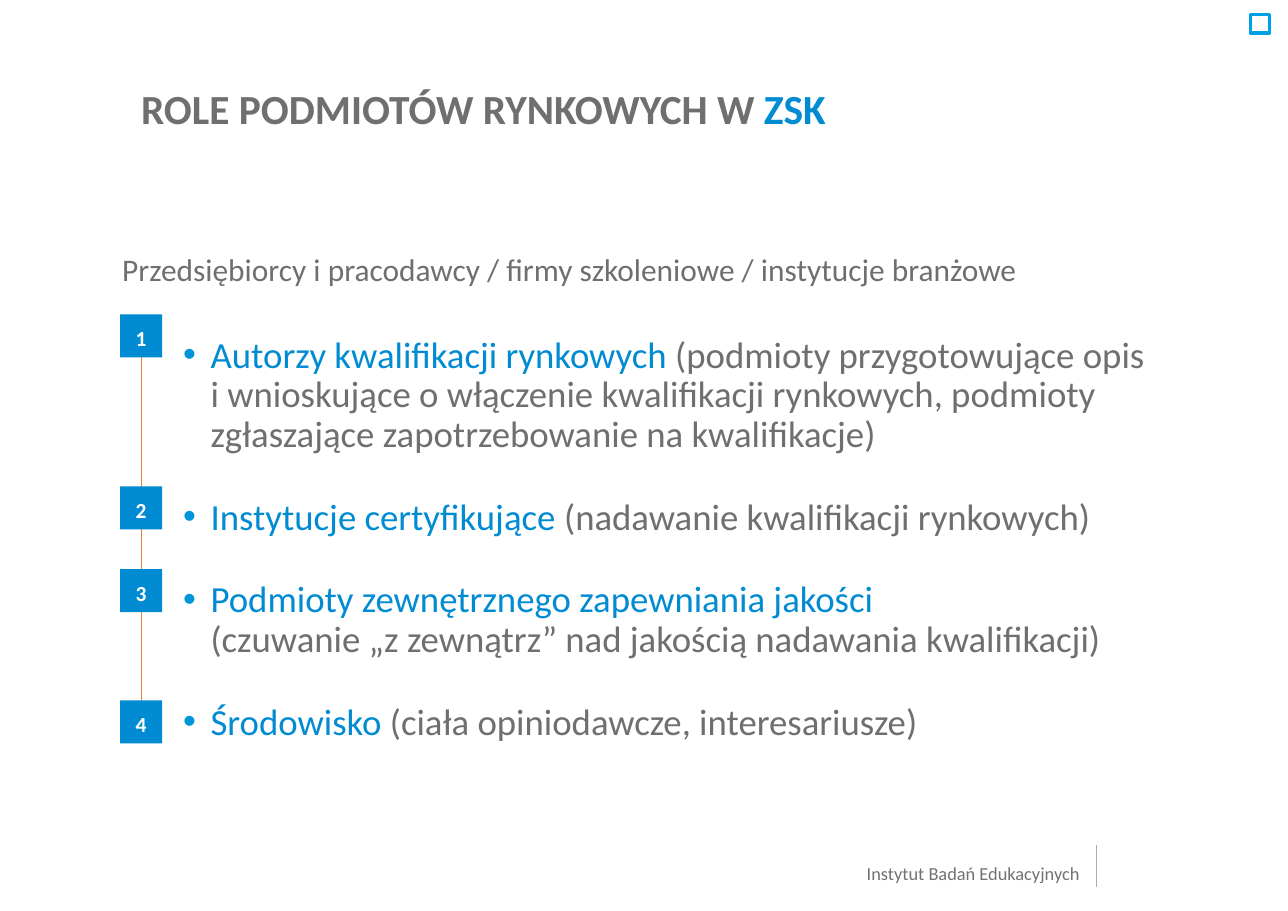
from dataclasses import dataclass

import lxml.etree
import pptx
import pptx.dml.color
import pptx.enum.shapes
import pptx.enum.text
import pptx.oxml.ns
import pptx.util

Inches, Pt = pptx.util.Inches, pptx.util.Pt
qn = pptx.oxml.ns.qn
ALIGN = pptx.enum.text.PP_ALIGN
ANCHOR = pptx.enum.text.MSO_ANCHOR
RECT = pptx.enum.shapes.MSO_SHAPE.RECTANGLE
BLUE, GREY, WHITE = "008BD2", "706E6F", "FFFFFF"
BADGE_LEFT, BADGE_W, BADGE_H = 1.09, 0.38, 0.39


@dataclass
class Role:
    badge_top: float
    name: str
    details: str  # a line feed is a line break inside the paragraph


ROLES = [
    Role(2.85, "Autorzy kwalifikacji rynkowych ",
         "(podmioty przygotowujące opis \ni wnioskujące o włączenie kwalifikacji rynkowych, "
         "podmioty zgłaszające zapotrzebowanie na kwalifikacje)"),
    Role(4.41, "Instytucje certyfikujące ", "(nadawanie kwalifikacji rynkowych)"),
    Role(5.16, "Podmioty zewnętrznego zapewniania jakości ",
         "\n(czuwanie „z zewnątrz” nad jakością nadawania kwalifikacji)"),
    Role(6.35, "Środowisko ", "(ciała opiniodawcze, interesariusze)"),
]


def rgb(hex_color: str) -> pptx.dml.color.RGBColor:
    return pptx.dml.color.RGBColor.from_string(hex_color)


def place(sp, left: float, top: float, width: float, height: float) -> None:
    sp.left, sp.top = Inches(left), Inches(top)
    sp.width, sp.height = Inches(width), Inches(height)


def setup_frame(tf, inset: bool = False, **attrs) -> None:
    """Apply frame attributes, without margins unless inset is set."""
    values = {"word_wrap": True, "auto_size": pptx.enum.text.MSO_AUTO_SIZE.NONE,
              "vertical_anchor": ANCHOR.TOP}
    if not inset:
        values |= dict.fromkeys(
            ("margin_left", "margin_top", "margin_right", "margin_bottom"), 0)
    for name, value in (values | attrs).items():
        setattr(tf, name, value)


def add_text(p, text: str, size: float, color: str, bold: bool = False) -> None:
    for i, line in enumerate(text.split("\n")):
        if i:
            p.add_line_break()
        if line:
            r = p.add_run()
            r.text = line
            for name, value in {"name": "Calibri", "size": Pt(size), "bold": bold}.items():
                setattr(r.font, name, value)
            r.font.color.rgb = rgb(color)


def add_bullet(p, color: str) -> None:
    pPr = p._p.get_or_add_pPr()
    pPr.set("marL", str(Inches(0.25)))
    pPr.set("indent", str(Inches(-0.25)))
    clr = lxml.etree.SubElement(pPr, qn("a:buClr"))
    lxml.etree.SubElement(clr, qn("a:srgbClr"), val=color)
    lxml.etree.SubElement(pPr, qn("a:buFont"), typeface="Arial")
    lxml.etree.SubElement(pPr, qn("a:buChar"), char="•")


def add_line(s, x: float, top: float, bottom: float, color: str) -> None:
    line = s.shapes.add_connector(pptx.enum.shapes.MSO_CONNECTOR.STRAIGHT,
                                  Inches(x), Inches(top), Inches(x), Inches(bottom))
    line.line.color.rgb = rgb(color)
    line.line.width = Pt(0.5)
    lxml.etree.SubElement(line._element.spPr, qn("a:effectLst"))


def add_rect(s, left: float, top: float, width: float, height: float, fill: str):
    sp = s.shapes.add_shape(RECT, Inches(left), Inches(top), Inches(width), Inches(height))
    sp.shadow.inherit = False
    sp.fill.solid()
    sp.fill.fore_color.rgb = rgb(fill)
    sp.line.fill.background()
    return sp


def add_label(s, left: float, top: float, width: float, height: float,
              text: str, size: float, color: str, inset: bool = False) -> None:
    sp = s.shapes.add_textbox(Inches(left), Inches(top), Inches(width), Inches(height))
    setup_frame(sp.text_frame, inset)
    add_text(sp.text_frame.paragraphs[0], text, size, color)


def add_badge(s, number: int, top: float) -> None:
    sp = add_rect(s, BADGE_LEFT, top, BADGE_W, BADGE_H, BLUE)
    setup_frame(sp.text_frame, vertical_anchor=ANCHOR.MIDDLE)
    p = sp.text_frame.paragraphs[0]
    p.alignment, p.line_spacing = ALIGN.CENTER, 1.15
    add_text(p, str(number), 14, WHITE, bold=True)


def fill_title(sp) -> None:
    place(sp, 1.28, 0.8, 10.2, 0.73)
    setup_frame(sp.text_frame)
    p = sp.text_frame.paragraphs[0]
    p.alignment, p.line_spacing = ALIGN.LEFT, 0.9
    add_text(p, "ROLE PODMIOTÓW RYNKOWYCH W ", 27, GREY, bold=True)
    add_text(p, "ZSK", 27, BLUE, bold=True)


def fill_roles(sp) -> None:
    place(sp, 1.66, 3.05, 8.9, 3.8)
    tf = sp.text_frame
    setup_frame(tf)
    for i, role in enumerate(ROLES):
        p = tf.add_paragraph() if i else tf.paragraphs[0]
        add_bullet(p, "0094D8")
        p.line_spacing, p.space_before = 0.9, Pt(28 if i else 0)
        add_text(p, role.name, 24, BLUE)
        add_text(p, role.details, 24, GREY)


def main() -> None:
    prs = pptx.Presentation()
    prs.slide_width, prs.slide_height = Inches(11.68), Inches(8.26)
    s = prs.slides.add_slide(prs.slide_layouts[1])
    fill_title(s.shapes.title)
    fill_roles(s.placeholders[1])

    add_label(s, 7.86, 7.82, 1.95, 0.21, "Instytut Badań Edukacyjnych", 12, "767171")
    add_line(s, 9.94, 7.66, 8.04, "AFABAB")

    add_line(s, BADGE_LEFT + BADGE_W / 2, 3.05, 6.54, "ED7D31")
    for number, role in enumerate(ROLES, 1):
        add_badge(s, number, role.badge_top)

    add_label(s, 1.01, 2.22, 10.08, 0.5,
              "Przedsiębiorcy i pracodawcy / firmy szkoleniowe / instytucje branżowe",
              20.5, GREY, inset=True)
    corner = add_rect(s, 11.34, 0.13, 0.17, 0.17, WHITE)
    corner.line.color.rgb = rgb("00A1E4")
    corner.line.width = Pt(2)
    prs.save("out.pptx")


if __name__ == "__main__":
    main()
